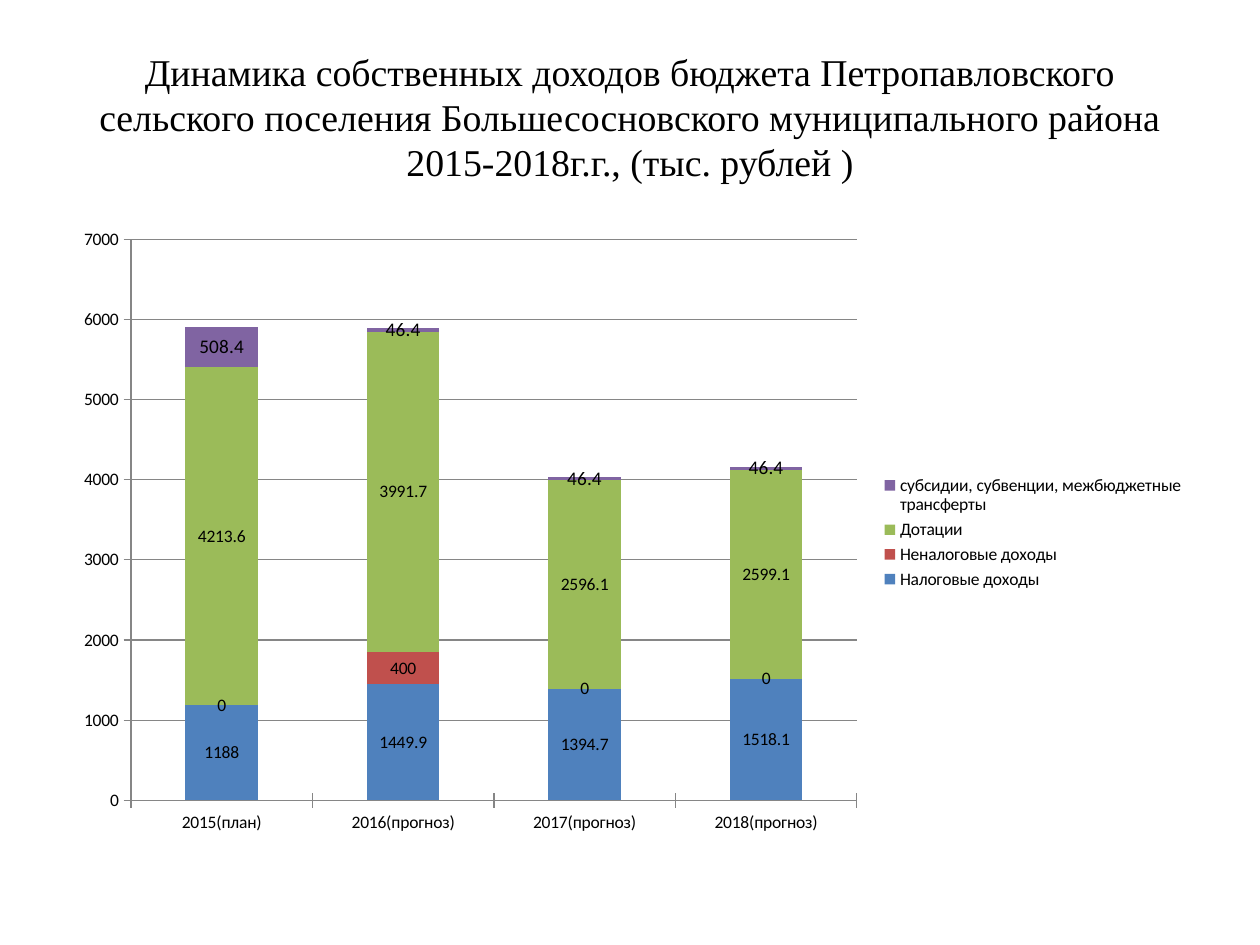
from lxml import etree
from pptx import Presentation
from pptx.chart.data import CategoryChartData
from pptx.dml.color import RGBColor
from pptx.enum.chart import XL_CHART_TYPE as ChartType
from pptx.enum.chart import XL_LABEL_POSITION as LabelPosition
from pptx.enum.chart import XL_LEGEND_POSITION as LegendPosition
from pptx.enum.chart import XL_TICK_MARK as TickMark
from pptx.enum.text import MSO_ANCHOR, PP_ALIGN
from pptx.oxml.ns import qn
from pptx.util import Inches, Pt

COLORS = {
    "text": "000000",
    "axis": "868686",
    "tax": "4F81BD",
    "non_tax": "C0504D",
    "grants": "9BBB59",
    "transfers": "8064A2",
}
TITLE = (
    "Динамика собственных доходов бюджета Петропавловского сельского поселения "
    "Большесосновского муниципального района 2015-2018г.г., (тыс. рублей )"
)
YEARS = ["2015(план)", "2016(прогноз)", "2017(прогноз)", "2018(прогноз)"]
INCOME = [
    ("Налоговые доходы", "tax", 10, [1188, 1449.9, 1394.7, 1518.1]),
    ("Неналоговые доходы", "non_tax", 10, [0, 400, 0, 0]),
    ("Дотации", "grants", 10, [4213.6, 3991.7, 2596.1, 2599.1]),
    ("субсидии, субвенции, межбюджетные трансферты", "transfers", 11,
     [508.4, 46.4, 46.4, 46.4]),
]
PLOT_LAYOUT = {"x": 0.06, "y": 0.03, "w": 0.64, "h": 0.9}


def color(name):
    """Return the named palette colour."""
    return RGBColor.from_string(COLORS[name])


def style_font(font, size, family):
    """Apply size, family and the text colour to a font."""
    font.size = Pt(size)
    font.name = family
    font.color.rgb = color("text")


def fill_title(title):
    """Place the title placeholder and write the heading."""
    title.left, title.top = Inches(0.5), Inches(0.3)
    title.width, title.height = Inches(9), Inches(1.25)
    frame = title.text_frame
    frame.word_wrap = True
    frame.vertical_anchor = MSO_ANCHOR.MIDDLE
    frame.text = TITLE
    para = frame.paragraphs[0]
    para.alignment = PP_ALIGN.CENTER
    style_font(para.font, 21.6, "Times New Roman")


def style_axis(axis, gridlines):
    """Give an axis its ticks, line and gridlines."""
    axis.major_tick_mark = TickMark.CROSS
    axis.format.line.color.rgb = color("axis")
    axis.has_major_gridlines = gridlines
    if gridlines:
        axis.major_gridlines.format.line.color.rgb = color("axis")


def style_series(series, fill, label_size):
    """Colour a series and show its values."""
    series.format.fill.solid()
    series.format.fill.fore_color.rgb = color(fill)
    labels = series.data_labels
    labels.show_value = True
    labels.position = LabelPosition.CENTER
    style_font(labels.font, label_size, "Calibri")


def place_plot(chart):
    """Fix the inner plot area as fractions of the chart."""
    area = chart.plots[0]._element.getparent()
    for old in area.findall(qn("c:layout")):
        area.remove(old)
    layout = etree.Element(qn("c:layout"))
    manual = etree.SubElement(layout, qn("c:manualLayout"))
    settings = {"layoutTarget": "inner", "xMode": "edge", "yMode": "edge", **PLOT_LAYOUT}
    for tag, value in settings.items():
        etree.SubElement(manual, qn(f"c:{tag}")).set("val", str(value))
    area.insert(0, layout)


def add_income_chart(page):
    """Add the stacked columns of income by year."""
    data = CategoryChartData()
    data.categories = YEARS
    for name, _, _, values in INCOME:
        data.add_series(name, values)
    chart = page.shapes.add_chart(
        ChartType.COLUMN_STACKED, Inches(0.5), Inches(1.75), Inches(9), Inches(4.95), data
    ).chart
    style_font(chart.font, 10, "Calibri")
    chart.has_title = False
    chart.has_legend = True
    chart.legend.position = LegendPosition.RIGHT
    chart.legend.include_in_layout = False
    style_axis(chart.category_axis, False)
    style_axis(chart.value_axis, True)
    plot = chart.plots[0]
    plot.vary_by_categories = False
    plot.gap_width, plot.overlap = 150, 100
    for series, (_, fill, label_size, _) in zip(plot.series, INCOME):
        style_series(series, fill, label_size)
    place_plot(chart)


def main():
    """Build and save the slide."""
    deck = Presentation()
    deck.slide_width, deck.slide_height = Inches(10), Inches(7.5)
    page = deck.slides.add_slide(deck.slide_layouts[5])
    fill_title(page.shapes.title)
    add_income_chart(page)
    deck.save("out.pptx")


if __name__ == "__main__":
    main()
